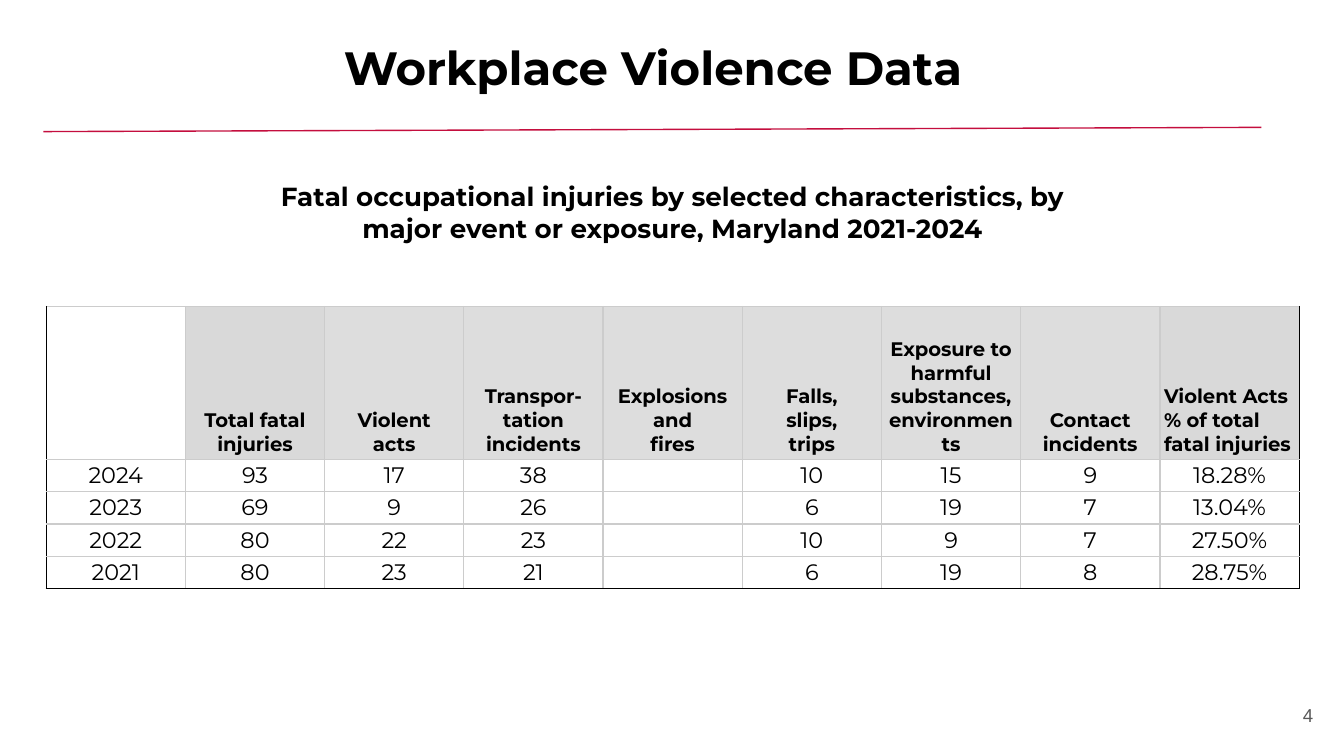
from copy import deepcopy

from lxml.etree import SubElement
from pptx import Presentation
from pptx.dml.color import RGBColor
from pptx.enum.shapes import MSO_CONNECTOR as Connector
from pptx.enum.text import MSO_ANCHOR as Anchor, PP_ALIGN as Align
from pptx.oxml.ns import qn
from pptx.util import Emu, Pt

SCALE = 9525
COLORS = {
    "background": "FFFFFF",
    "text": "000000",
    "page_number": "595959",
    "rule": "C40E3E",
    "grid": "CCCCCC",
    "frame": "000000",
    "header": "DDDDDD",
    "header_total": "D9D9D9",
}
HEADERS = [
    "",
    "Total fatal injuries",
    "Violent\nacts",
    "Transpor-\ntation\nincidents",
    "Explosions\nand\nfires",
    "Falls,\nslips,\ntrips",
    "Exposure to\nharmful\nsubstances,\nenvironments",
    "Contact\nincidents",
    "Violent Acts % of total fatal injuries",
]
RECORDS = [
    ["2024", "93", "17", "38", "", "10", "15", "9", "18.28%"],
    ["2023", "69", "9", "26", "", "6", "19", "7", "13.04%"],
    ["2022", "80", "22", "23", "", "10", "9", "7", "27.50%"],
    ["2021", "80", "23", "21", "", "6", "19", "8", "28.75%"],
]


def px(value):
    """Turn pixels into EMU."""
    return Emu(value * SCALE)


def color(name):
    """Look up a named colour."""
    return RGBColor.from_string(COLORS[name])


def write_text(frame, text, size=12, bold=False, font="Montserrat",
               fill="text", align=Align.CENTER, line_spacing=None):
    """Write one formatted paragraph, with line breaks at newlines."""
    paragraph = frame.paragraphs[0]
    paragraph.text = text.replace("\n", "\v")
    paragraph.alignment = align
    if line_spacing:
        paragraph.line_spacing = line_spacing
    for run in paragraph.runs:
        run.font.name = font
        run.font.size = Pt(size)
        run.font.bold = bold
        run.font.color.rgb = color(fill)
    for line_break in paragraph._p.findall(qn("a:br")):
        line_break.append(deepcopy(paragraph.runs[0].font._element))
    if not text:
        SubElement(paragraph._p, qn("a:endParaRPr"), sz=str(size * 100))


def add_text(slide, box, text, insets=(10, 5), anchor=Anchor.TOP, **text_format):
    """Place a wrapping text box in the given box."""
    frame = slide.shapes.add_textbox(*map(px, box)).text_frame
    frame.word_wrap = True
    frame.vertical_anchor = anchor
    frame.margin_left = frame.margin_right = px(insets[0])
    frame.margin_top = frame.margin_bottom = px(insets[1])
    write_text(frame, text, **text_format)


def add_heading(slide, box):
    """Place the slide title and the slanted rule below it."""
    left, top, width, height = box
    add_text(slide, (left + 25, top, 821, 36), "Workplace Violence Data",
             insets=(0, 0), size=25, bold=True, line_spacing=0.9)
    rule = slide.shapes.add_connector(
        Connector.STRAIGHT, px(left), px(top + height),
        px(left + width), px(top + height - 3))
    rule.line.color.rgb = color("rule")
    rule.line.width = Pt(0.75)
    SubElement(rule._element.spPr, qn("a:effectLst"))


def set_borders(cell, **sides):
    """Draw the cell borders, given as side=colour name."""
    properties = cell._tc.get_or_add_tcPr()
    for side, name in sides.items():
        line = SubElement(properties, qn(f"a:ln{side}"), w=str(Pt(0.75)))
        solid = SubElement(line, qn("a:solidFill"))
        SubElement(solid, qn("a:srgbClr"), val=COLORS[name])


def format_cell(cell, text, row, column, last_row, last_column):
    """Fill one table cell according to its place in the grid."""
    is_header = row == 0
    set_borders(
        cell,
        L="frame" if column == 0 else "grid",
        R="frame" if column == last_column else "grid",
        T="grid",
        B="frame" if row == last_row else "grid",
    )
    fill = "background"
    if is_header and column:
        fill = "header_total" if column in (1, last_column) else "header"
    cell.fill.solid()
    cell.fill.fore_color.rgb = color(fill)
    cell.vertical_anchor = Anchor.BOTTOM
    cell.margin_left = cell.margin_right = px(3)
    cell.margin_top = cell.margin_bottom = px(2)
    align = Align.LEFT if is_header and column == last_column else Align.CENTER
    write_text(cell.text_frame, text, size=10.5 if is_header and text else 12,
               bold=is_header, align=align)


def add_injury_table(slide, box, header_height):
    """Place the injury table with equal columns and equal record rows."""
    rows = [HEADERS, *RECORDS]
    last_row, last_column = len(rows) - 1, len(HEADERS) - 1
    table = slide.shapes.add_table(len(rows), len(HEADERS), *map(px, box)).table
    table.first_row = table.horz_banding = False
    record_height = (box[3] - header_height) // len(RECORDS)
    for row, values in enumerate(rows):
        table.rows[row].height = px(record_height if row else header_height)
        for column, text in enumerate(values):
            format_cell(table.cell(row, column), text, row, column,
                        last_row, last_column)


def main():
    """Build and save the slide."""
    presentation = Presentation()
    presentation.slide_width, presentation.slide_height = px(960), px(540)
    slide = presentation.slides.add_slide(presentation.slide_layouts[6])
    slide.background.fill.solid()
    slide.background.fill.fore_color.rgb = color("background")
    add_text(slide, (890, 490, 58, 41), "4", insets=(10, 10),
             anchor=Anchor.MIDDLE, size=10, font="Arial",
             fill="page_number", align=Align.RIGHT)
    add_heading(slide, (31, 32, 870, 62))
    add_text(slide, (171, 124, 619, 55),
             "Fatal occupational injuries by selected characteristics, by "
             "major event or exposure, Maryland 2021-2024", size=14, bold=True)
    add_injury_table(slide, (33, 219, 895, 185), header_height=109)
    presentation.save("out.pptx")


if __name__ == "__main__":
    main()
